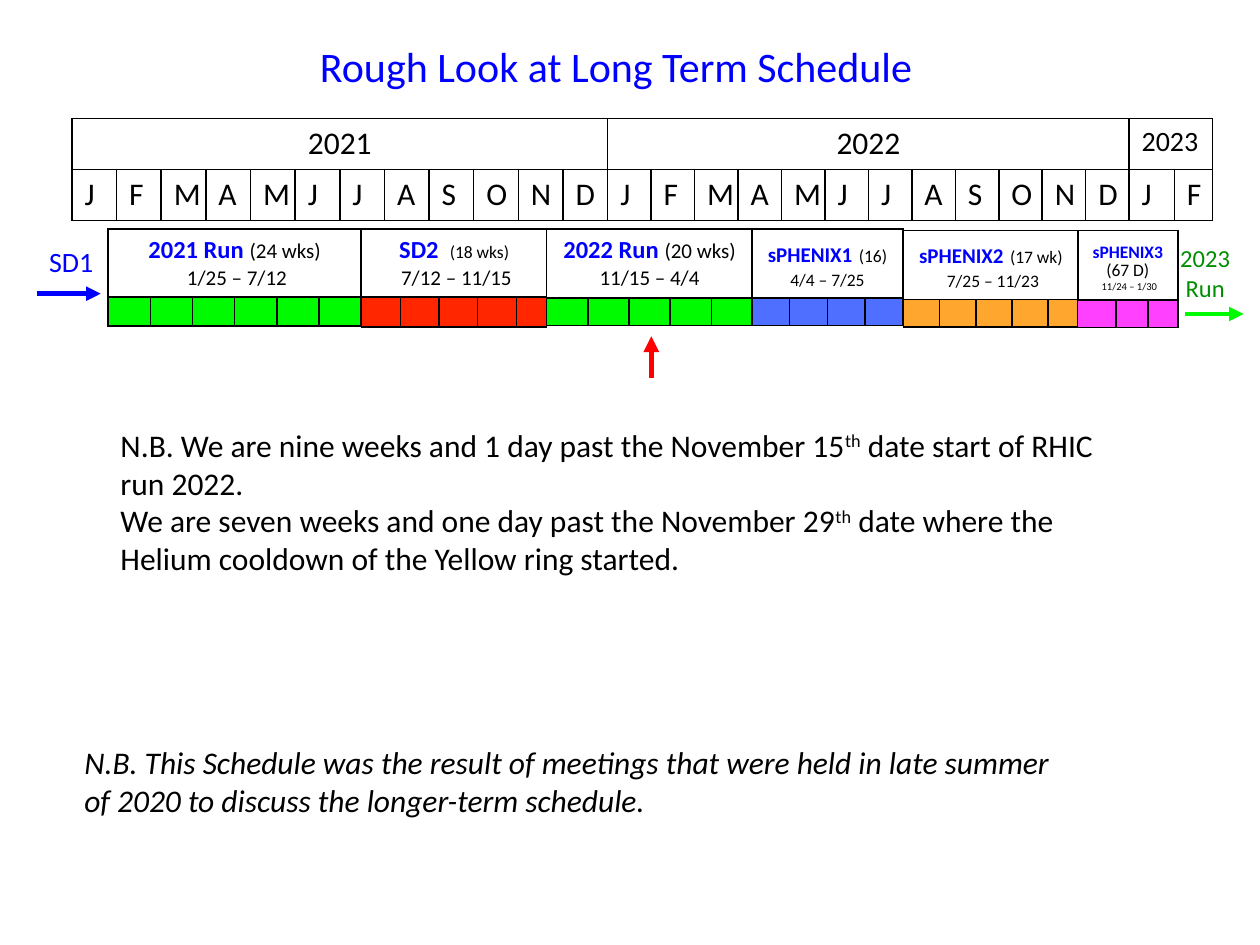
from dataclasses import dataclass
from typing import NamedTuple, Optional

from lxml import etree
from pptx import Presentation
from pptx.dml.color import RGBColor
from pptx.enum.shapes import MSO_CONNECTOR
from pptx.enum.text import MSO_AUTO_SIZE, PP_ALIGN
from pptx.oxml.ns import qn
from pptx.util import Cm, Pt

FONT = "Calibri"
LEFT, CENTER = PP_ALIGN.LEFT, PP_ALIGN.CENTER
STRAIGHT = MSO_CONNECTOR.STRAIGHT
FIT_SHAPE = MSO_AUTO_SIZE.SHAPE_TO_FIT_TEXT

BLACK = RGBColor(0x00, 0x00, 0x00)
BLUE = RGBColor(0x00, 0x00, 0xFF)
RED = RGBColor(0xFF, 0x00, 0x00)
DARK_GREEN = RGBColor(0x00, 0x8F, 0x00)
RUN_GREEN = RGBColor(0x00, 0xFA, 0x00)
SHUTDOWN_RED = RGBColor(0xFF, 0x26, 0x00)
COBALT = RGBColor(0x04, 0x32, 0xFF)
ORANGE = RGBColor(0xFF, 0x93, 0x00)
MAGENTA = RGBColor(0xFF, 0x40, 0xFF)


class Piece(NamedTuple):
    text: str
    size: float
    color: RGBColor = BLACK
    bold: bool = False
    italic: bool = False
    superscript: bool = False


@dataclass
class Period:
    """One block of the timeline; lengths in centimetres."""
    left: float
    top: float
    widths: list[float]
    heights: tuple[float, float]
    lines: list[list[Piece]]
    color: RGBColor
    opacity: int = 100
    spacing: Optional[float] = None


@dataclass
class Note:
    box: tuple[float, float, float, float]
    lines: list[list[Piece]]
    align: PP_ALIGN = LEFT
    wrap: bool = True


@dataclass
class Arrow:
    start: tuple[float, float]
    end: tuple[float, float]
    color: RGBColor
    width: float = 2.75


def name(text: str, size: float) -> Piece:
    return Piece(text, size, BLUE, bold=True)


PERIODS = [
    Period(2.18, 4.62, [0.85] * 6, (1.36, 0.58),
           [[name("2021 Run ", 14), Piece("(24 wks)", 12)],
            [Piece(" 1/25 – 7/12", 12)]], RUN_GREEN),
    Period(11.02, 4.62, [0.83] * 5, (1.39, 0.55),
           [[name("2022 Run ", 14), Piece("(20 wks) 11/15 – 4/4", 12)]], RUN_GREEN),
    Period(7.29, 4.62, [0.78] * 4 + [0.59], (1.36, 0.6),
           [[name("SD2  ", 14), Piece("(18 wks)", 10)],
            [Piece(" 7/12 – 11/15", 12)]], SHUTDOWN_RED),
    Period(15.16, 4.62, [0.76] * 4, (1.39, 0.55),
           [[name("sPHENIX1", 12), name(" ", 16), Piece("(16) 4/4 – 7/25", 10)]],
           COBALT, 70),
    Period(18.21, 4.65, [0.73] * 4 + [0.59], (1.39, 0.55),
           [[name("sPHENIX2", 12), name(" ", 16), Piece("(17 wk)", 10)],
            [Piece(" 7/25 – 11/23", 10)]], ORANGE, 82),
    Period(21.72, 4.65, [0.78, 0.64, 0.59], (1.36, 0.55),
           [[name("sPHENIX3", 10), name(" ", 16), Piece("(67 D)", 10)],
            [Piece(" ", 8), Piece("11/24 – 1/30", 6)]], MAGENTA, spacing=0.78),
]

NOTES = [
    Note((0.74, 4.8, 1.42, 0.94), [[Piece("SD1", 16, BLUE)]], wrap=False),
    Note((6.2, 0.69, 13.03, 1.27),
         [[Piece("Rough Look at Long Term Schedule", 24, BLUE)]]),
    Note((23.37, 4.78, 1.85, 1.45),
         [[Piece("2023", 14, DARK_GREEN)], [Piece("Run", 14, DARK_GREEN)]], CENTER),
    Note((1.45, 14.86, 20.62, 1.8),
         [[Piece("N.B. This Schedule was the result of meetings that were held in late "
                 "summer of 2020 to discuss the longer-term schedule.", 18, italic=True)]]),
    Note((2.18, 8.46, 20.55, 3.33),
         [[Piece("N.B. We are nine weeks and 1 day past the November 15", 18),
           Piece("th", 18, superscript=True),
           Piece(" date start of RHIC run 2022.", 18)],
          [Piece("We are seven weeks and one day past the November 29", 18),
           Piece("th", 18, superscript=True),
           Piece(" date where the Helium cooldown of the Yellow ring started.", 18)]]),
]

ARROWS = [
    Arrow((0.74, 5.92), (2.03, 5.92), BLUE),
    Arrow((23.88, 6.33), (25.07, 6.33), RUN_GREEN),
    Arrow((13.13, 7.62), (13.13, 6.78), RED, 3),
]


def write(frame, lines: list[list[Piece]], align: PP_ALIGN = LEFT,
          spacing: Optional[float] = None) -> None:
    for index, line in enumerate(lines):
        paragraph = frame.add_paragraph() if index else frame.paragraphs[0]
        paragraph.alignment = align
        if spacing:
            paragraph.line_spacing = spacing
        for piece in line:
            run = paragraph.add_run()
            run.text = piece.text
            run.font.name = FONT
            run.font.size = Pt(piece.size)
            run.font.bold = piece.bold
            run.font.italic = piece.italic
            run.font.color.rgb = piece.color
            if piece.superscript:
                run.font._element.set("baseline", "30000")


def add_borders(cell) -> None:
    """Black 1 pt borders, placed before the fill as the schema requires."""
    properties = cell._tc.get_or_add_tcPr()
    for index, side in enumerate(("a:lnL", "a:lnR", "a:lnT", "a:lnB")):
        border = etree.Element(qn(side), w=str(Pt(1)))
        fill = etree.SubElement(border, qn("a:solidFill"))
        etree.SubElement(fill, qn("a:srgbClr"), val=str(BLACK))
        properties.insert(index, border)


def add_grid(slide, left: float, top: float, widths: list[float],
             heights: tuple[float, float]):
    """A two-row table with plain bordered cells."""
    table = slide.shapes.add_table(2, len(widths), Cm(left), Cm(top),
                                   Cm(sum(widths)), Cm(sum(heights))).table
    table.first_row = table.horz_banding = False
    for column, width in zip(table.columns, widths):
        column.width = Cm(width)
    for row, height in zip(table.rows, heights):
        row.height = Cm(height)
    for cell in table.iter_cells():
        cell.fill.background()
        add_borders(cell)
    return table


def draw_calendar(slide) -> None:
    years = [("2021", 12, 18, CENTER), ("2022", 12, 18, CENTER), ("2023", 2, 16, LEFT)]
    widths = [10.8 / 12] * 12 + [10.52 / 12] * 12 + [0.91, 0.77]
    table = add_grid(slide, 1.45, 2.39, widths, (1.03, 1.03))
    first = 0
    for year, months, size, align in years:
        heading = table.cell(0, first)
        heading.merge(table.cell(0, first + months - 1))
        write(heading.text_frame, [[Piece(year, size)]], align)
        for offset, month in enumerate("JFMAMJJASOND"[:months]):
            write(table.cell(1, first + offset).text_frame, [[Piece(month, 18)]])
        first += months


def draw_period(slide, period: Period) -> None:
    table = add_grid(slide, period.left, period.top, period.widths, period.heights)
    last = len(period.widths) - 1
    heading = table.cell(0, 0)
    heading.merge(table.cell(0, last))
    write(heading.text_frame, period.lines, CENTER, period.spacing)
    for index in range(last + 1):
        block = table.cell(1, index)
        block.margin_top = block.margin_bottom = 0
        etree.SubElement(block.text_frame.paragraphs[0]._p, qn("a:endParaRPr"), sz="800")
        block.fill.solid()
        block.fill.fore_color.rgb = period.color
        if period.opacity < 100:
            color = block._tc.tcPr.find(qn("a:solidFill")).find(qn("a:srgbClr"))
            etree.SubElement(color, qn("a:alpha"), val=str(period.opacity * 1000))


def draw_note(slide, note: Note) -> None:
    frame = slide.shapes.add_textbox(*map(Cm, note.box)).text_frame
    frame.word_wrap = note.wrap
    frame.auto_size = FIT_SHAPE
    write(frame, note.lines, note.align)


def draw_arrow(slide, arrow: Arrow) -> None:
    connector = slide.shapes.add_connector(STRAIGHT, *map(Cm, arrow.start + arrow.end))
    connector.line.color.rgb = arrow.color
    connector.line.width = Pt(arrow.width)
    etree.SubElement(connector.line._get_or_add_ln(), qn("a:tailEnd"), type="triangle")
    etree.SubElement(connector._element.spPr, qn("a:effectLst"))


def main() -> None:
    deck = Presentation()
    deck.slide_width, deck.slide_height = Cm(25.4), Cm(19.05)
    slide = deck.slides.add_slide(deck.slide_layouts[6])
    draw_calendar(slide)
    for period in PERIODS:
        draw_period(slide, period)
    for note in NOTES:
        draw_note(slide, note)
    for arrow in ARROWS:
        draw_arrow(slide, arrow)
    deck.save("out.pptx")


if __name__ == "__main__":
    main()
